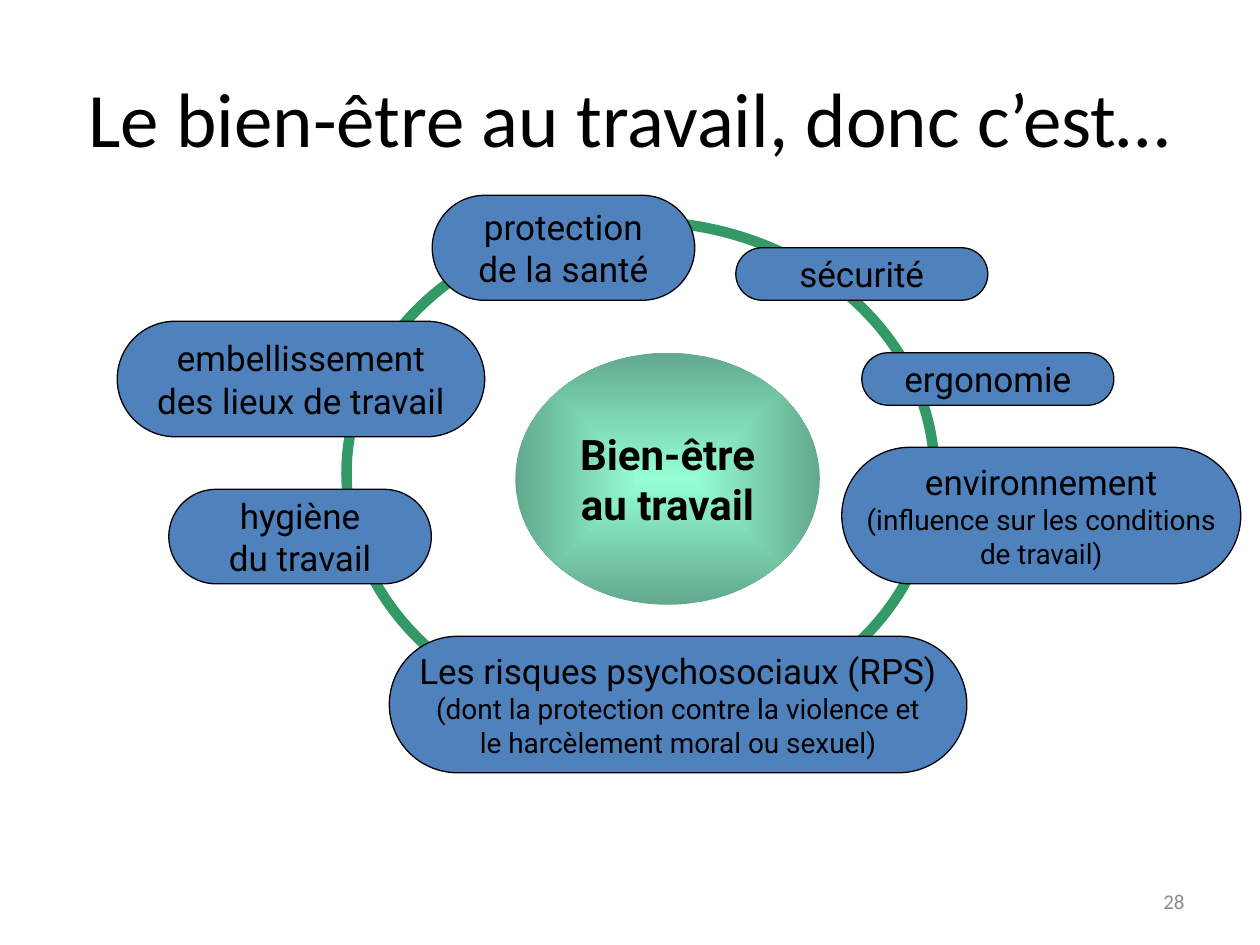
from lxml.etree import SubElement as Sub
from pptx import Presentation
from pptx.dml.color import RGBColor
from pptx.enum.shapes import MSO_SHAPE as Shape
from pptx.enum.text import MSO_ANCHOR as Anchor, PP_ALIGN as Align
from pptx.oxml.ns import qn
from pptx.util import Pt

HUES = {
    "ink": "000000", "grey": "8C8C8C", "ring": "339966",
    "pill": "4F81BD", "mint": "95FFD4", "moss": "63A98D",
}

# Box (left, top, width, height) and lines: the first at 20 pt, notes at 16 pt
PILLS = [
    ((492.5, 201.6, 144, 30), ["ergonomie"], []),
    ((247, 111.6, 150, 60), ["protection", "de la santé"], []),
    ((481, 255.6, 228, 78), ["environnement"],
     ["(influence sur les conditions", "de travail)"]),
    ((96.5, 279.6, 150, 54), ["hygiène", "du travail"], []),
    ((420.5, 141.6, 144, 30), ["sécurité"], []),
    ((67, 183.6, 210, 66), ["embellissement", "des lieux de travail"], []),
    ((222.5, 363.6, 330, 78), ["Les risques psychosociaux (RPS)"],
     ["(dont la protection contre la violence et",
      "le harcèlement moral ou sexuel)"]),
]


def hue(name):
    return RGBColor.from_string(HUES[name])


def pts(box):
    return [Pt(v) for v in box]


def write(frame, rows, face="Roboto", tint="ink", bold=False,
          align=Align.CENTER, wrap=False):
    """Fill a text frame with one paragraph per (text, size) row."""
    frame.word_wrap = wrap
    frame.vertical_anchor = Anchor.MIDDLE
    for i, (text, size) in enumerate(rows):
        para = frame.add_paragraph() if i else frame.paragraphs[0]
        para.alignment = align
        run = para.add_run()
        run.text = text
        font = run.font
        font.name, font.size, font.bold = face, Pt(size), bold
        font.color.rgb = hue(tint)


def add_form(slide, kind, box):
    form = slide.shapes.add_shape(kind, *pts(box))
    form.shadow.inherit = False
    return form


def edge(form, tint, width):
    form.line.color.rgb = hue(tint)
    form.line.width = Pt(width)


def add_title(slide, box):
    title = slide.shapes.title
    title.left, title.top, title.width, title.height = pts(box)
    write(title.text_frame, [("Le bien-être au travail, donc c’est…", 44)],
          "Calibri", wrap=True)


def add_ring(slide, box):
    ring = add_form(slide, Shape.OVAL, box)
    ring.fill.background()
    edge(ring, "ring", 6)


def add_core(slide, box):
    """Place the central oval, shaded from its middle outwards."""
    core = add_form(slide, Shape.OVAL, box)
    core.line.fill.background()
    core.fill.gradient()
    for stop, tint in zip(core.fill.gradient_stops, ("mint", "moss")):
        stop.color.rgb = hue(tint)
    grad = core._element.spPr.find(qn("a:gradFill"))
    grad.remove(grad.find(qn("a:lin")))
    shade = Sub(grad, qn("a:path"), {"path": "shape"})
    Sub(shade, qn("a:fillToRect"), dict.fromkeys("ltrb", "50000"))
    write(core.text_frame, [("Bien-être", 24), ("au travail", 24)], bold=True)


def add_pill(slide, box, heads, notes):
    pill = add_form(slide, Shape.ROUNDED_RECTANGLE, box)
    pill.adjustments[0] = 0.5
    pill.fill.solid()
    pill.fill.fore_color.rgb = hue("pill")
    edge(pill, "ink", 0.75)
    write(pill.text_frame,
          [(t, 20) for t in heads] + [(t, 16) for t in notes])


def add_number(slide, box):
    label = slide.shapes.add_textbox(*pts(box))
    write(label.text_frame, [("28", 12)], "Calibri", "grey",
          align=Align.RIGHT, wrap=True)


def main():
    deck = Presentation()
    deck.slide_width, deck.slide_height = Pt(720), Pt(540)
    slide = deck.slides.add_slide(deck.slide_layouts[5])
    add_title(slide, (36, 21.6, 648, 90))
    add_ring(slide, (198, 126.6, 336, 288))
    add_core(slide, (294.5, 201.6, 174, 144))
    for box, heads, notes in PILLS:
        add_pill(slide, box, heads, notes)
    add_number(slide, (516, 500.5, 168, 28.75))
    deck.save("out.pptx")


if __name__ == "__main__":
    main()
